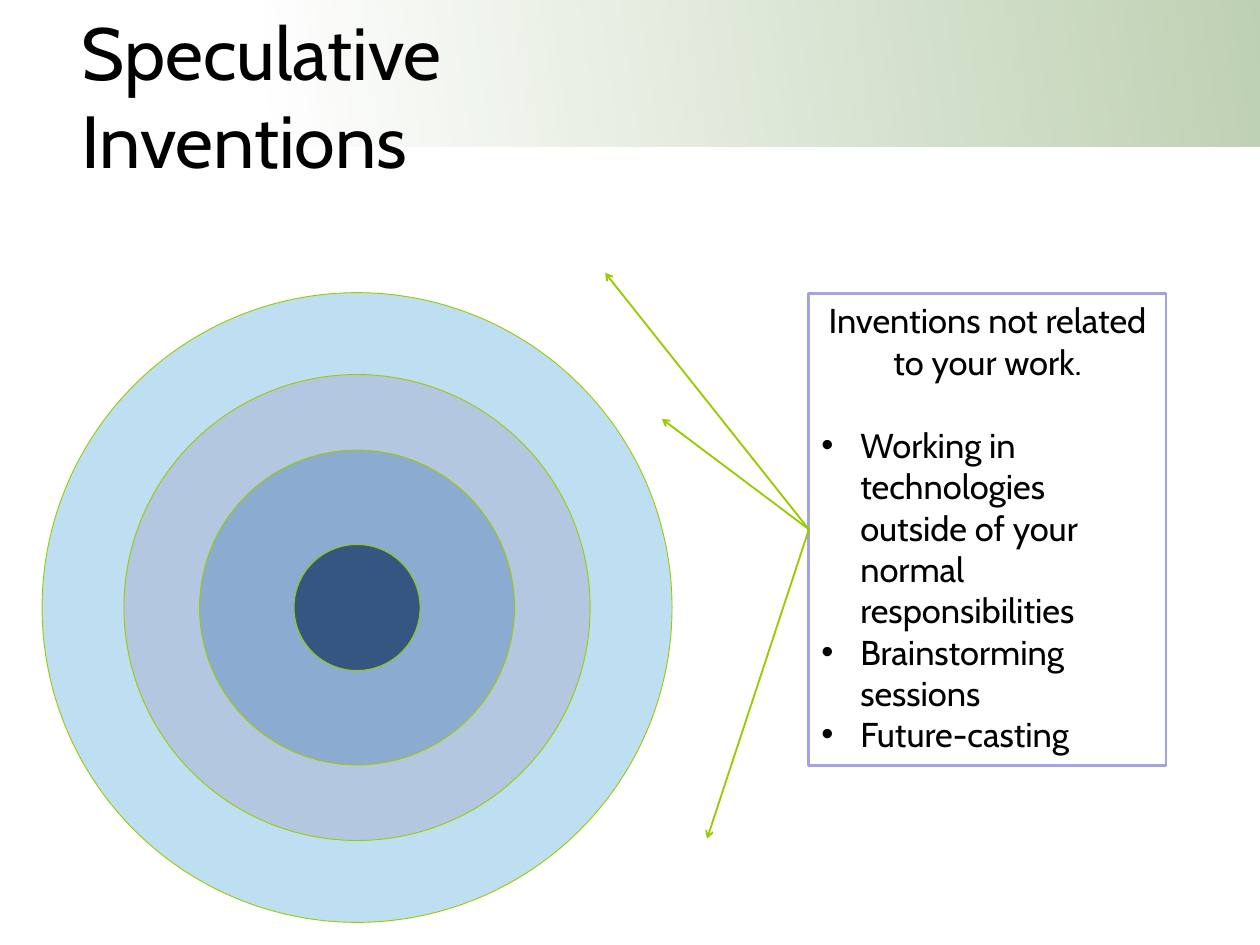
from lxml.etree import SubElement
from pptx import Presentation
from pptx.dml.color import RGBColor
from pptx.enum.shapes import MSO_CONNECTOR, MSO_SHAPE
from pptx.enum.text import MSO_ANCHOR, MSO_AUTO_SIZE, PP_ALIGN
from pptx.oxml.ns import qn
from pptx.util import Inches, Pt

SLIDE_WIDTH = Inches(14.22)
SLIDE_HEIGHT = Inches(10.67)
FONT = "Cabin"

BLACK = RGBColor(0x00, 0x00, 0x00)
WHITE = RGBColor(0xFF, 0xFF, 0xFF)
BAND_GREEN = RGBColor(0x50, 0x82, 0x31)
LIME = RGBColor(0x99, 0xCC, 0x00)
LAVENDER = RGBColor(0xA3, 0xA3, 0xE0)

RING_CENTER = (28.34, 64.29)
RINGS = [
    (50, RGBColor(0xBE, 0xDF, 0xF2)),
    (37, RGBColor(0xB3, 0xC7, 0xE0)),
    (25, RGBColor(0x8C, 0xAB, 0xD0)),
    (10, RGBColor(0x35, 0x56, 0x80)),
]

PANEL_LEFT, PANEL_TOP, PANEL_WIDTH, PANEL_HEIGHT = 64.2, 31.02, 28.34, 50
ARROW_TIPS = [(48.03, 28.87), (52.53, 44.33), (56.12, 88.75)]

TITLE = "Speculative\vInventions"
HEADING = "Inventions not related to your work."
EXAMPLES = [
    "Working in technologies outside of your normal responsibilities",
    "Brainstorming sessions",
    "Future-casting",
]


def across(percent):
    return round(SLIDE_WIDTH * percent / 100)


def down(percent):
    return round(SLIDE_HEIGHT * percent / 100)


def set_font(paragraph, size):
    paragraph.font.name = FONT
    paragraph.font.size = Pt(size)
    paragraph.font.color.rgb = BLACK


def set_frame(frame):
    frame.word_wrap = True
    frame.vertical_anchor = MSO_ANCHOR.TOP
    frame.margin_left = frame.margin_right = Inches(0.14)
    frame.margin_top = frame.margin_bottom = Inches(0.07)


def add_band(slide):
    band = slide.shapes.add_shape(
        MSO_SHAPE.RECTANGLE, across(21.03), 0, across(78.97), down(15.46))
    band.shadow.inherit = False
    band.line.fill.background()
    band.fill.gradient()
    band.fill.gradient_angle = 8
    for stop, color in zip(band.fill.gradient_stops, (WHITE, BAND_GREEN)):
        stop.color.rgb = color
    for tint in band.fill._xPr.iter(qn("a:srgbClr")):
        SubElement(tint, qn("a:alpha"), val="36000")


def add_title(slide):
    title = slide.shapes.add_textbox(
        across(5.49), 0, across(80.45), down(33.83))
    set_frame(title.text_frame)
    title.text_frame.text = TITLE
    set_font(title.text_frame.paragraphs[0], 60)


def add_ring(slide, diameter, color):
    size = across(diameter)
    center_x, center_y = RING_CENTER
    ring = slide.shapes.add_shape(
        MSO_SHAPE.OVAL, across(center_x) - size // 2,
        down(center_y) - size // 2, size, size)
    ring.shadow.inherit = False
    ring.fill.solid()
    ring.fill.fore_color.rgb = color
    ring.line.color.rgb = LIME
    ring.line.width = Pt(0.75)


def add_bullet(paragraph):
    properties = paragraph._p.get_or_add_pPr()
    properties.set("marL", str(Inches(0.44)))
    properties.set("indent", str(-Inches(0.44)))
    SubElement(properties, qn("a:buFont"), typeface="Arial")
    SubElement(properties, qn("a:buChar"), char="•")


def add_panel(slide):
    panel = slide.shapes.add_shape(
        MSO_SHAPE.RECTANGLE, across(PANEL_LEFT), down(PANEL_TOP),
        across(PANEL_WIDTH), down(PANEL_HEIGHT))
    panel.shadow.inherit = False
    panel.fill.background()
    panel.line.color.rgb = LAVENDER
    panel.line.width = Pt(2.25)
    frame = panel.text_frame
    set_frame(frame)
    frame.auto_size = MSO_AUTO_SIZE.SHAPE_TO_FIT_TEXT
    heading = frame.paragraphs[0]
    heading.text = HEADING
    heading.alignment = PP_ALIGN.CENTER
    heading.space_after = Pt(34)
    set_font(heading, 28)
    for example in EXAMPLES:
        item = frame.add_paragraph()
        item.text = example
        item.alignment = PP_ALIGN.LEFT
        add_bullet(item)
        set_font(item, 28)


def add_arrow(slide, tip_x, tip_y):
    arrow = slide.shapes.add_connector(
        MSO_CONNECTOR.STRAIGHT, across(PANEL_LEFT),
        down(PANEL_TOP + PANEL_HEIGHT / 2), across(tip_x), down(tip_y))
    arrow.line.color.rgb = LIME
    arrow.line.width = Pt(1.5)
    SubElement(arrow.line._get_or_add_ln(), qn("a:tailEnd"), type="arrow")
    SubElement(arrow._element.spPr, qn("a:effectLst"))


def main():
    presentation = Presentation()
    presentation.slide_width = SLIDE_WIDTH
    presentation.slide_height = SLIDE_HEIGHT
    slide = presentation.slides.add_slide(presentation.slide_layouts[6])
    add_band(slide)
    add_title(slide)
    for diameter, color in RINGS:
        add_ring(slide, diameter, color)
    add_panel(slide)
    for tip_x, tip_y in ARROW_TIPS:
        add_arrow(slide, tip_x, tip_y)
    presentation.save("out.pptx")


if __name__ == "__main__":
    main()
